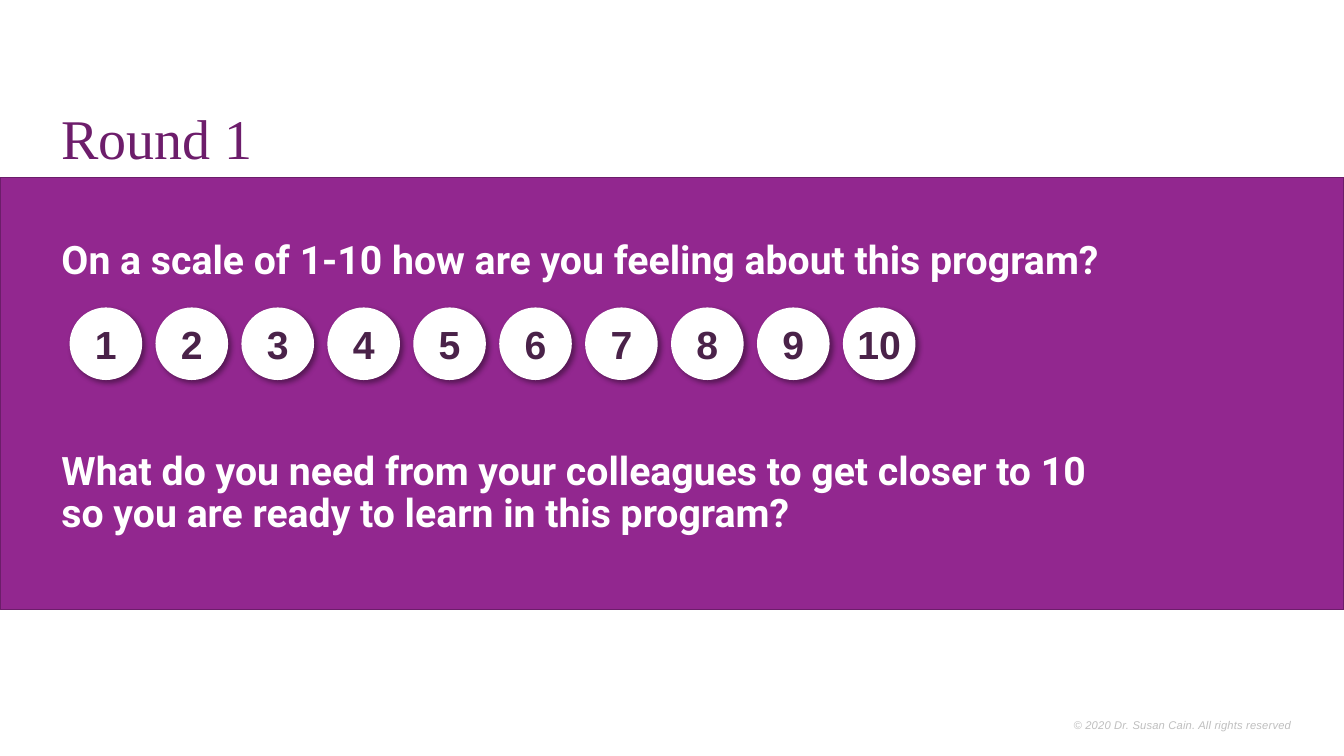
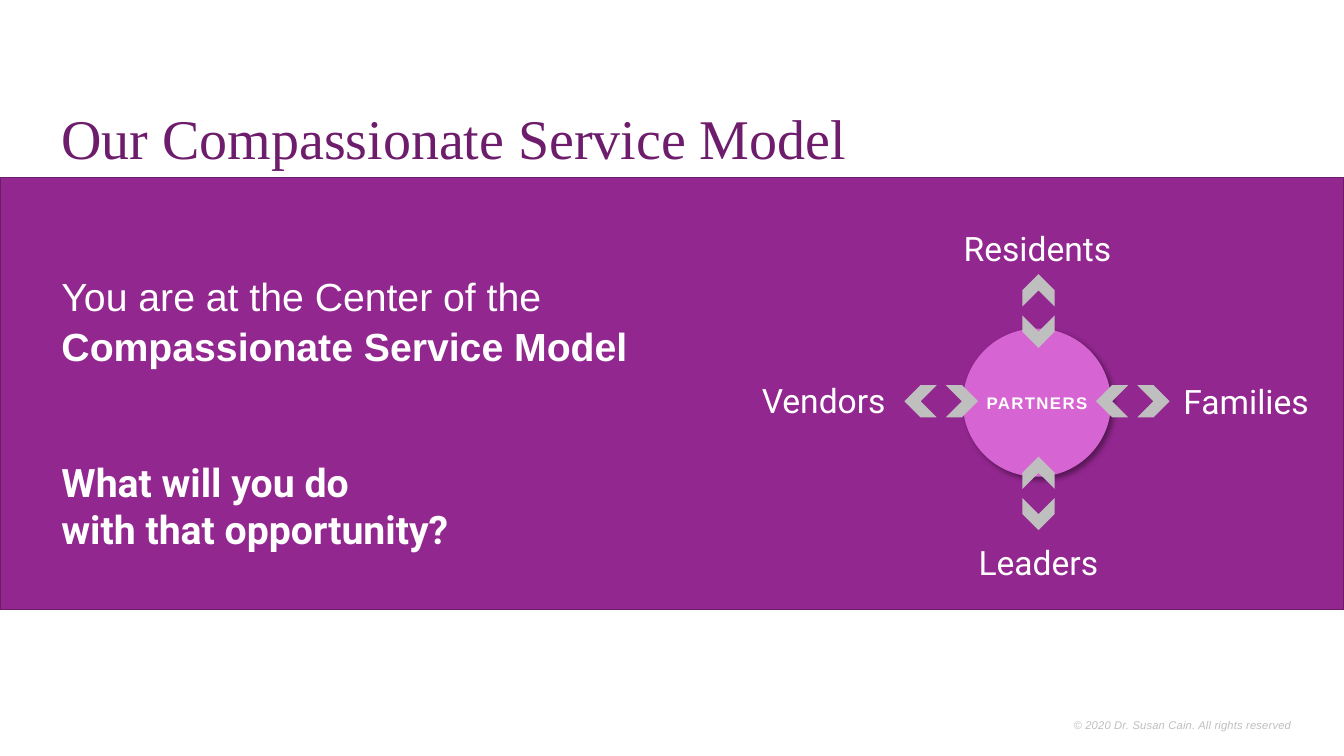
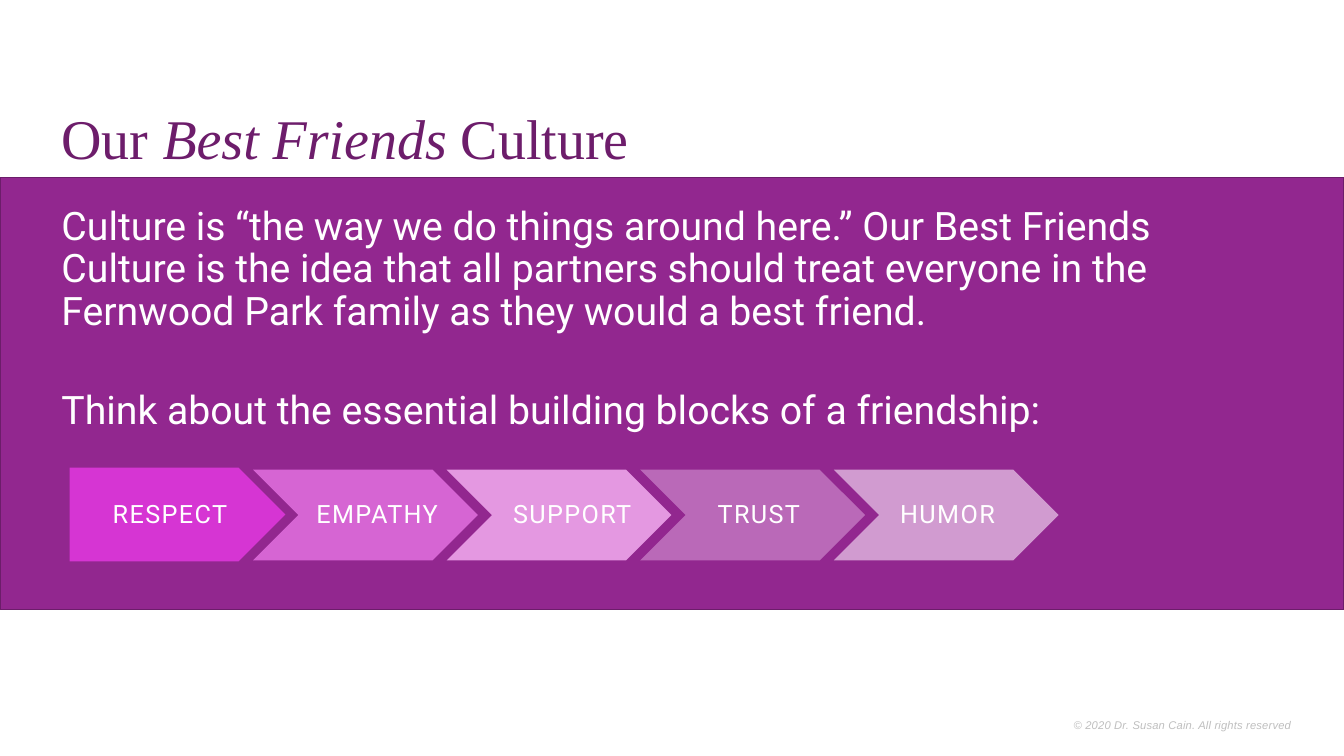
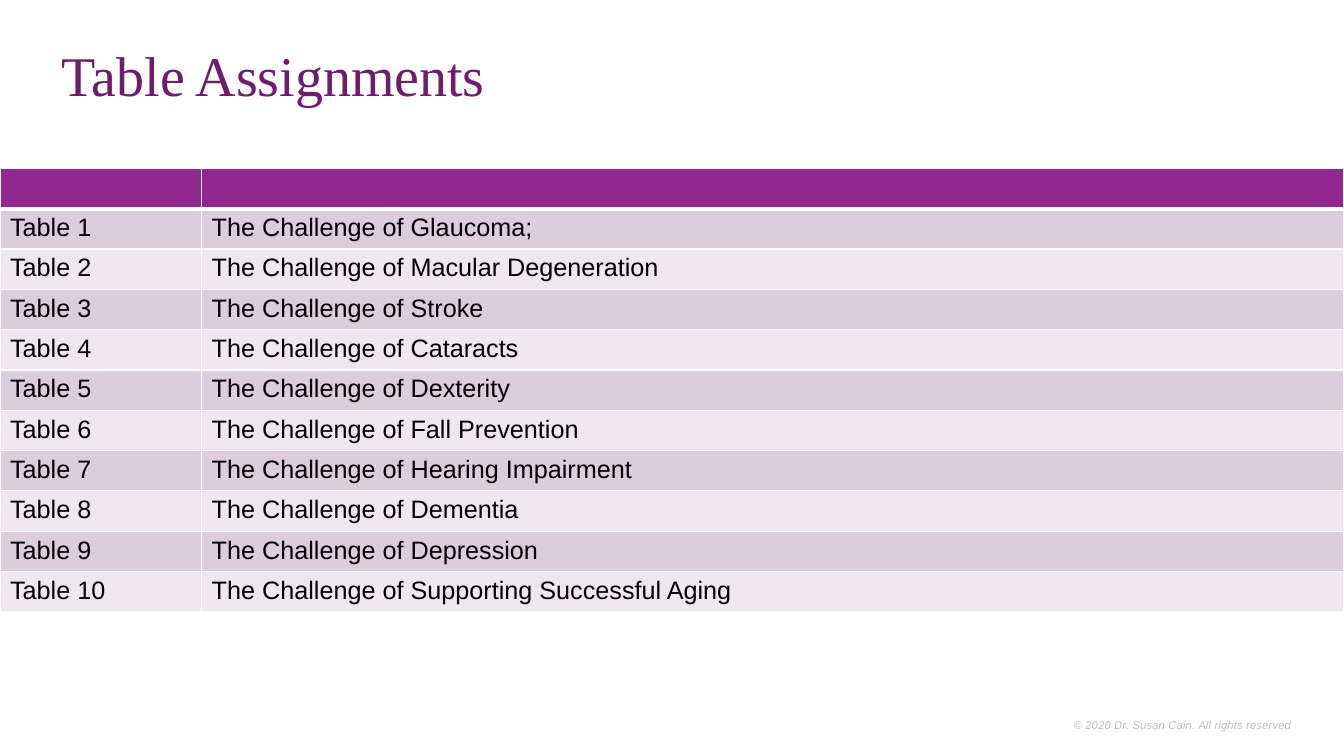
import pptx
import pptx.dml.color
import pptx.enum.shapes
import pptx.enum.text
import pptx.oxml
import pptx.oxml.ns
import pptx.util
from lxml import etree

Inches = pptx.util.Inches
Pt = pptx.util.Pt
RGBColor = pptx.dml.color.RGBColor
Shape = pptx.enum.shapes.MSO_SHAPE
Align = pptx.enum.text.PP_ALIGN
Anchor = pptx.enum.text.MSO_ANCHOR
qn = pptx.oxml.ns.qn

WHITE = RGBColor(0xFF, 0xFF, 0xFF)
BLACK = RGBColor(0x00, 0x00, 0x00)
GREY = RGBColor(0xBF, 0xBF, 0xBF)
PURPLE = RGBColor(0x92, 0x27, 0x8F)
PURPLE_EDGE = RGBColor(0x6C, 0x1D, 0x6A)
TITLE_PURPLE = RGBColor(0x6D, 0x1D, 0x6B)
DARK_PLUM = RGBColor(0x4A, 0x22, 0x49)
MAGENTA = RGBColor(0xD6, 0x35, 0xD3)
ORCHID = RGBColor(0xD6, 0x65, 0xD3)
PINK = RGBColor(0xE4, 0x98, 0xE1)
MAUVE = RGBColor(0xBA, 0x69, 0xB8)
LILAC = RGBColor(0xD1, 0x9B, 0xD0)
ROW_DARK = RGBColor(0xDC, 0xCD, 0xDB)
ROW_LIGHT = RGBColor(0xEE, 0xE8, 0xEE)

SANS, BODY, SERIF = "Arial", "Roboto", "Times New Roman"
WIDTH, HEIGHT = 13.33, 7.5
MARGIN = 0.51
TITLE_AND_BODY, TITLE_ONLY = 1, 5


class Deck:
    """Hold the shared style and the current page, and draw each kind of element."""

    def __init__(self):
        self.deck = pptx.Presentation()
        self.deck.slide_width = Inches(WIDTH)
        self.deck.slide_height = Inches(HEIGHT)
        self.page = None

    def new_page(self, layout, title, title_top=1.05, band=True):
        self.page = self.deck.slides.add_slide(self.deck.slide_layouts[layout])
        if band:
            bar = self.shape(Shape.RECTANGLE, 0, 1.76, WIDTH, 4.29, PURPLE)
            bar.line.color.rgb = PURPLE_EDGE
            bar.line.width = Pt(1)
            tree = self.page.shapes._spTree
            tree.remove(bar._element)
            tree.insert(2, bar._element)
        footer = self.label("© 2020 Dr. Susan Cain. All rights reserved",
                            10.55, 7.08, 2.41, 0.24, 8, GREY, SANS, tracking=0.1)
        footer.font.italic = True
        self.title(title, title_top)

    def fill_para(self, para, content, size, color, font, bold=False, tracking=0,
                  align=Align.LEFT):
        if isinstance(content, str):
            para.text = content
        else:
            for text, emphasis in content:
                span = para.add_run()
                span.text = text
                if emphasis:
                    setattr(span.font, emphasis, True)
        para.alignment = align
        para.font.size = Pt(size)
        para.font.name = font
        para.font.bold = bold
        para.font.color.rgb = color
        if tracking:
            para.font._rPr.set("spc", str(round(tracking * 100)))

    def place(self, box, left, top, width, height):
        box.left, box.top = Inches(left), Inches(top)
        box.width, box.height = Inches(width), Inches(height)
        box.text_frame.word_wrap = True
        box.text_frame.auto_size = pptx.enum.text.MSO_AUTO_SIZE.NONE

    def title(self, content, top):
        box = self.page.shapes.title
        self.place(box, MARGIN, top, 10.18, 0.7)
        box.text_frame.vertical_anchor = Anchor.BOTTOM
        para = box.text_frame.paragraphs[0]
        para.line_spacing = 0.9
        self.fill_para(para, content, 40, TITLE_PURPLE, SERIF)

    def body(self, top, width, height, gap, items):
        box = self.page.placeholders[1]
        self.place(box, MARGIN, top, width, height)
        frame = box.text_frame
        frame.vertical_anchor = Anchor.TOP
        for index, (content, font, bold, spacing) in enumerate(items):
            para = frame.add_paragraph() if index else frame.paragraphs[0]
            props = para._p.get_or_add_pPr()
            props.set("marL", "0")
            props.set("indent", "0")
            etree.SubElement(props, qn("a:buNone"))
            para.space_before = Pt(gap if index else 0)
            para.line_spacing = spacing
            self.fill_para(para, content, 28, WHITE, font, bold)

    def label(self, text, left, top, width, height, size, color=WHITE, font=BODY, **style):
        box = self.page.shapes.add_textbox(0, 0, 0, 0)
        self.place(box, left, top, width, height)
        para = box.text_frame.paragraphs[0]
        self.fill_para(para, text, size, color, font, **style)
        return para

    def shape(self, kind, left, top, width, height, fill, rotation=0):
        shape = self.page.shapes.add_shape(
            kind, Inches(left), Inches(top), Inches(width), Inches(height))
        shape.shadow.inherit = False
        shape.fill.solid()
        shape.fill.fore_color.rgb = fill
        shape.line.fill.background()
        shape.rotation = rotation
        return shape

    def disc(self, text, left, top, size, fill, font_size, color, tracking=0):
        disc = self.shape(Shape.OVAL, left, top, size, size, fill)
        effects = disc._element.spPr.find(qn("a:effectLst"))
        shadow = etree.SubElement(effects, qn("a:outerShdw"), blurRad=str(Pt(4)),
                                  dist=str(Pt(3)), dir="2700000", algn="tl", rotWithShape="0")
        black = etree.SubElement(shadow, qn("a:srgbClr"), val="000000")
        etree.SubElement(black, qn("a:alpha"), val="40000")
        frame = disc.text_frame
        frame.margin_left = frame.margin_right = frame.margin_top = frame.margin_bottom = 0
        frame.word_wrap = False
        frame.vertical_anchor = Anchor.MIDDLE
        self.fill_para(frame.paragraphs[0], text, font_size, color, SANS, True, tracking,
                       Align.CENTER)

    def cell(self, cell, text, fill, bottom=1):
        props = cell._tc.get_or_add_tcPr()
        for side, width in (("L", 1), ("R", 1), ("T", 1), ("B", bottom)):
            line = etree.SubElement(props, qn("a:ln" + side), w=str(Pt(width)))
            solid = etree.SubElement(line, qn("a:solidFill"))
            etree.SubElement(solid, qn("a:srgbClr"), val=str(WHITE))
        cell.fill.solid()
        cell.fill.fore_color.rgb = fill
        self.fill_para(cell.text_frame.paragraphs[0], text, 18, BLACK, SANS)

    def table(self, top, row_height, widths, rows):
        grid = self.page.shapes.add_table(
            len(rows) + 1, len(widths), 0, Inches(top), Inches(sum(widths)),
            Inches(row_height * (len(rows) + 1))).table
        for column, width in zip(grid.columns, widths):
            column.width = Inches(width)
        for row in grid.rows:
            row.height = Inches(row_height)
        for column in range(len(widths)):
            self.cell(grid.cell(0, column), "", PURPLE, bottom=3)
        for number, row in enumerate(rows, 1):
            for column, text in enumerate(row):
                self.cell(grid.cell(number, column), text, ROW_DARK if number % 2 else ROW_LIGHT)


def add_round(deck):
    deck.new_page(TITLE_AND_BODY, "Round 1")
    deck.body(2.34, 12.31, 3.75, 120, [
        ("On a scale of 1-10 how are you feeling about this program?", BODY, True, 0.9),
        ("What do you need from your colleagues to get closer to 10\v"
         "so you are ready to learn in this program?", BODY, True, 0.9),
    ])
    first, last, count = 0.69, 8.36, 10
    pitch = (last - first) / (count - 1)
    for index in range(count):
        deck.disc(str(index + 1), first + index * pitch, 3.05, 0.72, WHITE, 28, DARK_PLUM)


def add_service_model(deck):
    deck.new_page(TITLE_AND_BODY, "Our Compassionate Service Model")
    deck.body(2.62, 6.68, 2.95, 64, [
        ([("You are at the Center of the ", None), ("Compassionate Service Model", "bold")],
         SANS, False, 1.06),
        ("What will you do\vwith that opportunity?", BODY, True, 1.0),
    ])
    deck.disc("PARTNERS", 9.55, 3.26, 1.47, ORCHID, 12, WHITE, tracking=1)
    label_width = 1.9
    for text, center, top in (("Residents", 10.29, 2.21), ("Leaders", 10.3, 5.33),
                              ("Vendors", 8.17, 3.72), ("Families", 12.36, 3.73)):
        deck.label(text, center - label_width / 2, top, label_width, 0.5, 24, align=Align.CENTER)
    size, step = 0.32, 0.41
    for left in (8.97, 10.87):
        for index, rotation in enumerate((180, 0)):
            deck.shape(Shape.CHEVRON, left + index * step, 3.82, size, size, GREY, rotation)
    for top in (2.72, 4.53):
        for index, rotation in enumerate((270, 90)):
            deck.shape(Shape.CHEVRON, 10.14, top + index * step, size, size, GREY, rotation)


def add_culture(deck):
    deck.new_page(TITLE_AND_BODY,
                  [("Our ", None), ("Best Friends ", "italic"), ("Culture", None)])
    deck.body(2, 12.31, 3.75, 41, [
        ("Culture is “the way we do things around here.” Our Best Friends Culture is the idea "
         "that all partners should treat everyone in the Fernwood Park family as they would "
         "a best friend.", BODY, False, 0.9),
        ("Think about the essential building blocks of a friendship:", BODY, False, 0.9),
    ])
    deck.shape(Shape.PENTAGON, 0.69, 4.64, 2.14, 0.93, MAGENTA)
    for index, fill in enumerate((ORCHID, PINK, MAUVE, LILAC)):
        deck.shape(Shape.CHEVRON, 2.51 + index * 1.92, 4.66, 2.23, 0.9, fill)
    for text, left in (("RESPECT", 1.02), ("EMPATHY", 3.04), ("SUPPORT", 4.99),
                       ("TRUST", 7.02), ("HUMOR", 8.83)):
        deck.label(text, left, 4.89, 1.64, 0.56, 18, tracking=1)


def add_assignments(deck):
    deck.new_page(TITLE_ONLY, "Table Assignments", title_top=0.43, band=False)
    topics = ("Glaucoma;", "Macular Degeneration", "Stroke", "Cataracts", "Dexterity",
              "Fall Prevention", "Hearing Impairment", "Dementia", "Depression",
              "Supporting Successful Aging")
    rows = [(f"Table {number}", f"The Challenge of {topic}")
            for number, topic in enumerate(topics, 1)]
    deck.table(1.67, 0.4, (2, WIDTH - 2), rows)


def main():
    deck = Deck()
    add_round(deck)
    add_service_model(deck)
    add_culture(deck)
    add_assignments(deck)
    deck.deck.save("out.pptx")


if __name__ == "__main__":
    main()
